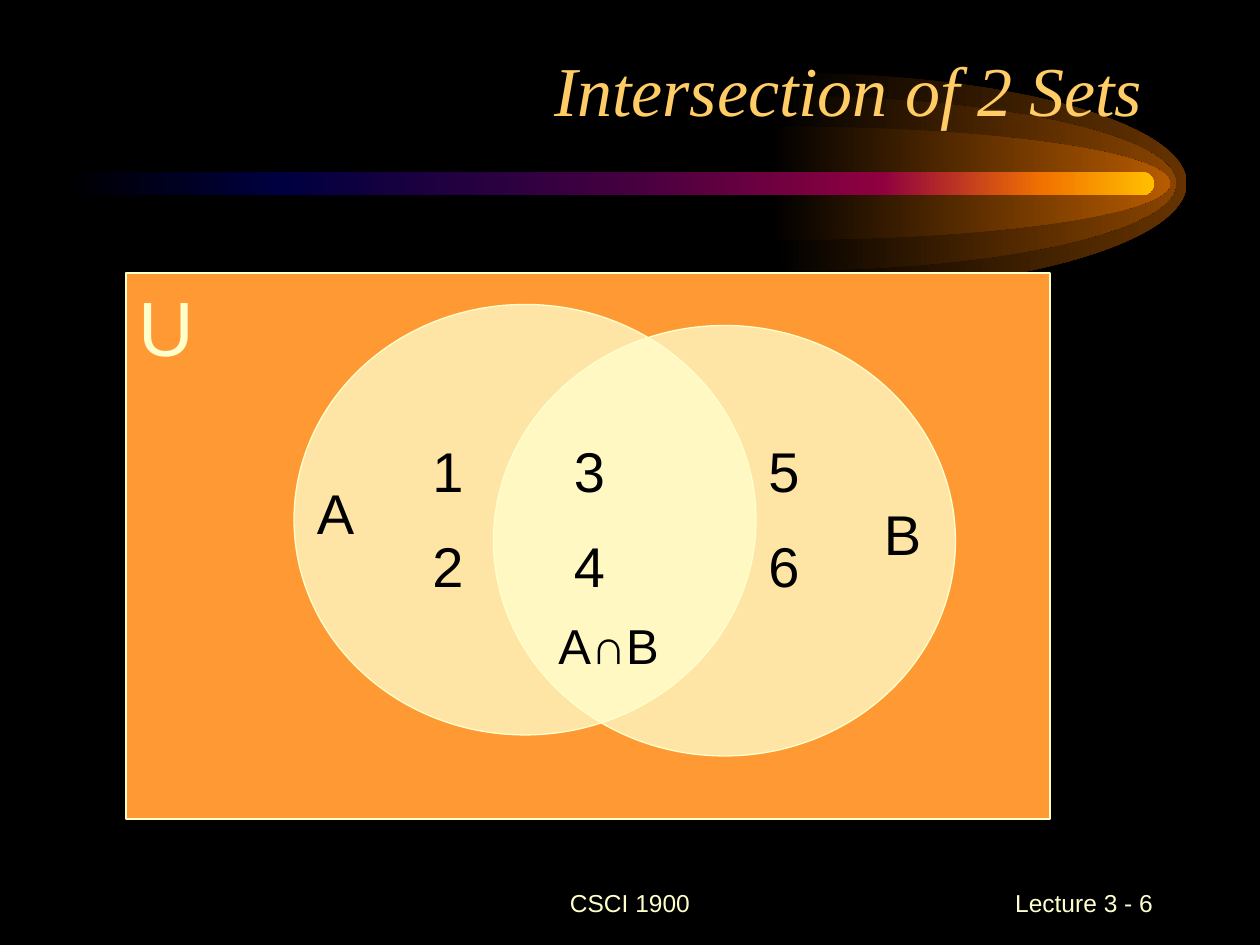
from lxml.etree import SubElement
from pptx import Presentation
from pptx.dml.color import RGBColor
from pptx.enum.shapes import MSO_SHAPE
from pptx.enum.text import MSO_ANCHOR, PP_ALIGN
from pptx.oxml.ns import qn
from pptx.util import Inches, Pt

BLACK = RGBColor(0x00, 0x00, 0x00)
CREAM = RGBColor(0xFF, 0xFF, 0xCC)
ORANGE = RGBColor(0xFF, 0x99, 0x33)
GOLD = RGBColor(0xFF, 0xCC, 0x66)
COMET = [(0, BLACK), (20, RGBColor(0x00, 0x00, 0x40)),
         (50, RGBColor(0x40, 0x00, 0x40)), (75, RGBColor(0x8F, 0x00, 0x40)),
         (90, RGBColor(0xF2, 0x73, 0x00)), (100, RGBColor(0xFF, 0xBF, 0x00))]
GLOWS = [(74.9, 10.5, RGBColor(0x66, 0x33, 0x00)),
         (73.9, 8.35, RGBColor(0x89, 0x44, 0x00)),
         (73.35, 5.42, RGBColor(0xB7, 0x5B, 0x00))]
ARC = 0.55  # handle length of a quarter ellipse, as a share of its radius


def write(shape, *lines, size=32, color=BLACK, font="Arial", italic=False,
          align=PP_ALIGN.LEFT, anchor=MSO_ANCHOR.TOP, gap=0):
    """Put one paragraph per line into a shape, with a gap between them."""
    frame = shape.text_frame
    frame.word_wrap = True
    frame.vertical_anchor = anchor
    for index, line in enumerate(lines):
        para = frame.add_paragraph() if index else frame.paragraphs[0]
        para.alignment = align
        para.space_before = Pt(gap if index else 0)
        span = para.add_run()
        span.text = line
        span.font.size = Pt(size)
        span.font.name = font
        span.font.italic = italic
        span.font.color.rgb = color


class Painter:
    """Draws on a grid of 120 columns by 90 rows."""
    columns, rows = 120, 90
    outline, outline_width = CREAM, Pt(0.75)

    def __init__(self, deck):
        self.page = deck.slides.add_slide(deck.slide_layouts[6])
        self.shapes = self.page.shapes
        self.column = deck.slide_width / self.columns
        self.row = deck.slide_height / self.rows

    def place(self, x, y):
        return round(x * self.column), round(y * self.row)

    def background(self, color):
        fill = self.page.background.fill
        fill.solid()
        fill.fore_color.rgb = color

    def gradient(self, shape, stops):
        shape.shadow.inherit = False
        shape.line.fill.background()
        shape.fill.gradient()
        shape.fill.gradient_angle = 0
        stop_list = shape._element.spPr.find(qn("a:gradFill")).find(qn("a:gsLst"))
        for old in list(stop_list):
            stop_list.remove(old)
        for share, color in stops:
            stop = SubElement(stop_list, qn("a:gs"), pos=str(share * 1000))
            SubElement(stop, qn("a:srgbClr"), val=str(color))

    def glow(self, x, y, width, height, color):
        """Right half of an ellipse, fading in from black."""
        builder = self.shapes.build_freeform(*self.place(x, y - height))
        builder.add_line_segments([self.place(x + width, y),
                                   self.place(x, y + height)], close=True)
        shape = builder.convert_to_shape()
        # Bend the two lines into quarter arcs
        wide, half = shape.width, shape.height / 2
        arcs = [[(ARC * wide, 0), (wide, half * (1 - ARC))],
                [(wide, half * (1 + ARC)), (ARC * wide, 2 * half)]]
        for line, handles in zip(list(shape._element.iter(qn("a:lnTo"))), arcs):
            line.tag = qn("a:cubicBezTo")
            for index, (across, down) in enumerate(handles):
                handle = SubElement(line, qn("a:pt"),
                                    x=str(round(across)), y=str(round(down)))
                line.insert(index, handle)
        self.gradient(shape, [(0, BLACK), (100, color)])

    def bar(self, x, y, width, height, stops):
        shape = self.shapes.add_shape(MSO_SHAPE.ROUNDED_RECTANGLE,
                                      *self.place(x, y), *self.place(width, height))
        shape.adjustments[0] = 0.5
        self.gradient(shape, stops)

    def area(self, kind, x, y, width, height, color, opacity=100):
        shape = self.shapes.add_shape(kind, *self.place(x, y), *self.place(width, height))
        shape.shadow.inherit = False
        shape.fill.solid()
        shape.fill.fore_color.rgb = color
        shape.line.color.rgb = self.outline
        shape.line.width = self.outline_width
        if opacity < 100:
            tint = shape._element.spPr.find(qn("a:solidFill"))[0]
            SubElement(tint, qn("a:alpha"), val=str(opacity * 1000))
        return shape

    def text(self, x, y, width, height, *lines, **style):
        box = self.shapes.add_textbox(*self.place(x, y), *self.place(width, height))
        write(box, *lines, **style)


def main():
    deck = Presentation()
    deck.slide_width, deck.slide_height = Inches(10), Inches(7.5)
    painter = Painter(deck)
    painter.background(BLACK)

    # Comet decoration
    for x, height, color in GLOWS:
        painter.glow(x, 17.46, 38.1, height, color)
    painter.bar(6, 16.4, 103.9, 2.2, COMET)

    # Footer
    footer = dict(size=14, color=CREAM, anchor=MSO_ANCHOR.MIDDLE)
    painter.text(41, 83, 38, 6, "CSCI 1900", align=PP_ALIGN.CENTER, **footer)
    painter.text(86, 83, 25, 6, " Lecture 3 - 6", align=PP_ALIGN.RIGHT, **footer)

    # Universe and title
    universe = painter.area(MSO_SHAPE.RECTANGLE, 12, 26, 88, 52, ORANGE)
    write(universe, "U", size=44, color=CREAM)
    painter.text(8, 3, 102, 10, "Intersection of 2 Sets", size=40, color=GOLD,
                 font="Times New Roman", italic=True, align=PP_ALIGN.RIGHT,
                 anchor=MSO_ANCHOR.BOTTOM)

    # Each set with its name and own members
    for name, x, y, name_x, members_x, members in [
            ("B", 47, 31, 83, 72, ("5", "6")),
            ("A", 28, 29, 29, 40, ("1", "2"))]:
        painter.area(MSO_SHAPE.OVAL, x, y, 44, 41, CREAM, opacity=75)
        painter.text(name_x, y + 16, 6, 7.5, name)
        painter.text(members_x, 41, 12, 17, *members, gap=16)

    # Shared members
    painter.text(52, 41, 12, 17, " 3", " 4", gap=16)
    painter.text(52, 58, 16, 7, "A∩B", size=28)

    deck.save("out.pptx")


if __name__ == "__main__":
    main()
